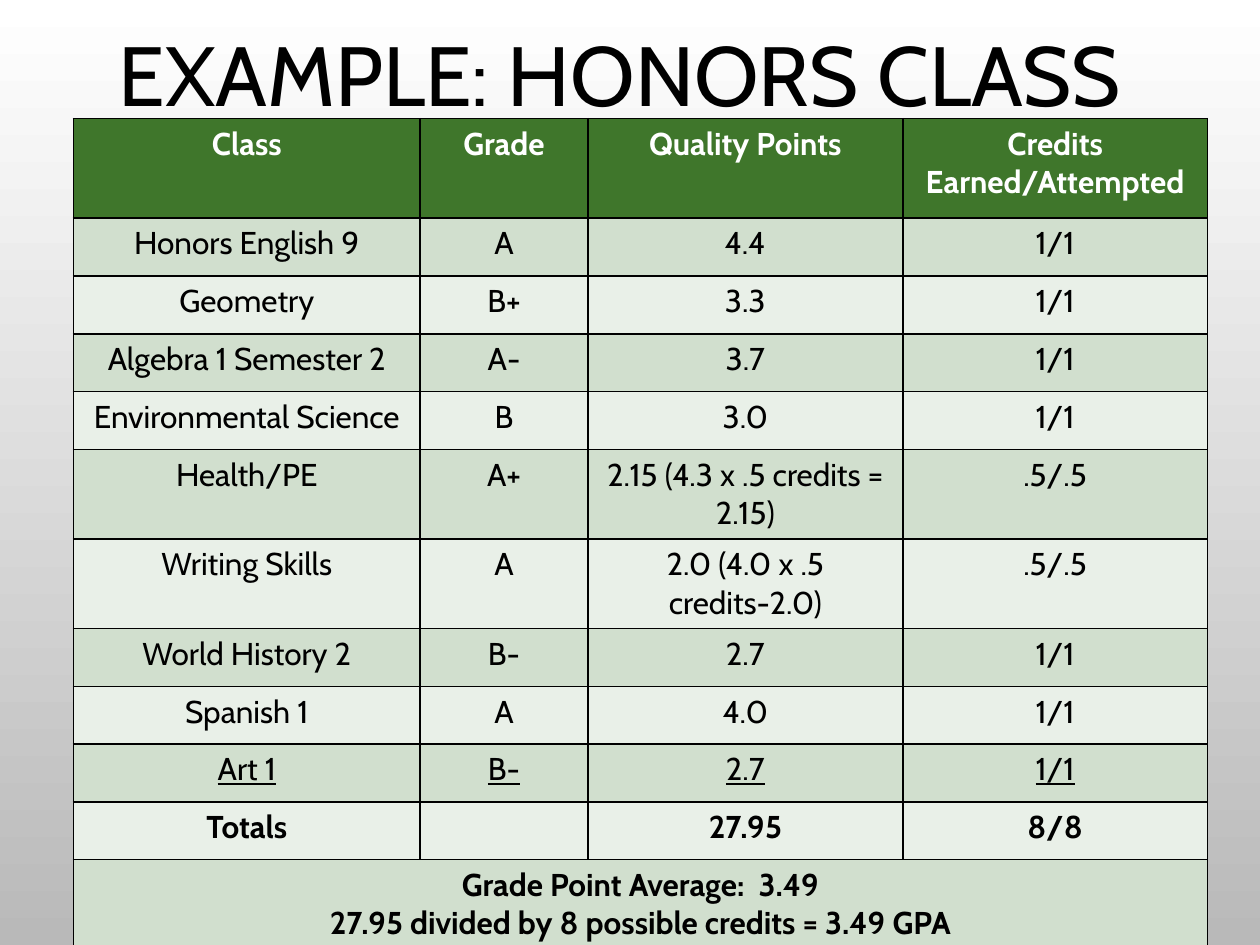
from dataclasses import dataclass

import lxml.etree
import pptx
import pptx.dml.color
import pptx.enum.text
import pptx.oxml.ns
import pptx.util
from pptx.util import Cm, Pt

COLORS = {
    "black": "000000",
    "white": "FFFFFF",
    "gray": "B9B9B9",
    "header": "3F762B",
    "odd": "D1DFCE",
    "even": "E9F0E8",
}
FONT = "Cabin"
CENTER = pptx.enum.text.PP_ALIGN.CENTER
COLUMN_WIDTHS = (6.99, 3.38, 6.35, 6.14)
HEADER_HEIGHT = 2.01
ROW_HEIGHT = 1.165


@dataclass
class GradeRow:
    texts: tuple[str, ...]
    bold: bool = False
    underline: bool = False
    color: str = "black"


ROWS = [
    GradeRow(("Class", "Grade", "Quality Points", "Credits Earned/Attempted"), bold=True, color="white"),
    GradeRow(("Honors English 9", "A", "4.4", "1/1")),
    GradeRow(("Geometry", "B+", "3.3", "1/1")),
    GradeRow(("Algebra 1 Semester 2", "A-", "3.7", "1/1")),
    GradeRow(("Environmental Science", "B", "3.0", "1/1")),
    GradeRow(("Health/PE", "A+", "2.15 (4.3 x .5 credits = 2.15)", ".5/.5")),
    GradeRow(("Writing Skills", "A", "2.0 (4.0 x .5 credits-2.0)", ".5/.5")),
    GradeRow(("World History 2", "B-", "2.7", "1/1")),
    GradeRow(("Spanish 1", "A", "4.0", "1/1")),
    GradeRow(("Art 1", "B-", "2.7", "1/1"), underline=True),
    GradeRow(("Totals", "", "27.95", "8/8"), bold=True),
    GradeRow(("Grade Point Average:  3.49\n27.95 divided by 8 possible credits = 3.49 GPA",), bold=True),
]


def rgb(name: str) -> pptx.dml.color.RGBColor:
    return pptx.dml.color.RGBColor.from_string(COLORS[name])


def write_text(frame, text: str, color: str, **font_format) -> None:
    frame.text = text
    for para in frame.paragraphs:
        para.alignment = CENTER
        for span in para.runs:
            for name, value in {"name": FONT, **font_format}.items():
                setattr(span.font, name, value)
            span.font.color.rgb = rgb(color)


def add_borders(cell) -> None:
    properties = cell._tc.get_or_add_tcPr()
    qn = pptx.oxml.ns.qn
    for side in ("a:lnL", "a:lnR", "a:lnT", "a:lnB"):
        line = lxml.etree.SubElement(properties, qn(side), w=str(Pt(1)))
        fill = lxml.etree.SubElement(line, qn("a:solidFill"))
        lxml.etree.SubElement(fill, qn("a:srgbClr"), val=COLORS["black"])


def paint_background(page) -> None:
    fill = page.background.fill
    fill.gradient()
    fill.gradient_angle = 270
    for stop, name in zip(fill.gradient_stops, ("white", "gray")):
        stop.color.rgb = rgb(name)


def place_title(page, text: str) -> None:
    title = page.shapes.title
    place = {"left": Cm(1.07), "top": Cm(0.43), "width": Cm(22.86), "height": Cm(2.34)}
    for name, value in place.items():
        setattr(title, name, value)
    frame = title.text_frame
    frame_format = {
        "word_wrap": True,
        "auto_size": pptx.enum.text.MSO_AUTO_SIZE.NONE,
        "vertical_anchor": pptx.enum.text.MSO_ANCHOR.MIDDLE,
    }
    for name, value in frame_format.items():
        setattr(frame, name, value)
    write_text(frame, text, "black", size=Pt(48))
    frame.paragraphs[0].line_spacing = 0.9


def add_grade_table(page, rows: list[GradeRow]) -> None:
    height = HEADER_HEIGHT + ROW_HEIGHT * (len(rows) - 1)
    table = page.shapes.add_table(
        len(rows), len(COLUMN_WIDTHS), Cm(1.48), Cm(2.39), Cm(sum(COLUMN_WIDTHS)), Cm(height)
    ).table
    for column, width in zip(table.columns, COLUMN_WIDTHS):
        column.width = Cm(width)
    for index, row in enumerate(rows):
        table.rows[index].height = Cm(ROW_HEIGHT if index else HEADER_HEIGHT)
        fill_name = ("odd" if index % 2 else "even") if index else "header"
        for cell in table.rows[index].cells:
            add_borders(cell)
            cell.fill.solid()
            cell.fill.fore_color.rgb = rgb(fill_name)
        for column, text in enumerate(row.texts):
            if text:
                frame = table.cell(index, column).text_frame
                write_text(frame, text, row.color, size=Pt(18), bold=row.bold, underline=row.underline)
    last = len(rows) - 1
    table.cell(last, 0).merge(table.cell(last, len(COLUMN_WIDTHS) - 1))


def main() -> None:
    deck = pptx.Presentation()
    deck.slide_width, deck.slide_height = Cm(25.4), Cm(19.05)
    page = deck.slides.add_slide(deck.slide_layouts[5])
    paint_background(page)
    place_title(page, "EXAMPLE: HONORS CLASS")
    add_grade_table(page, ROWS)
    deck.save("out.pptx")


if __name__ == "__main__":
    main()
